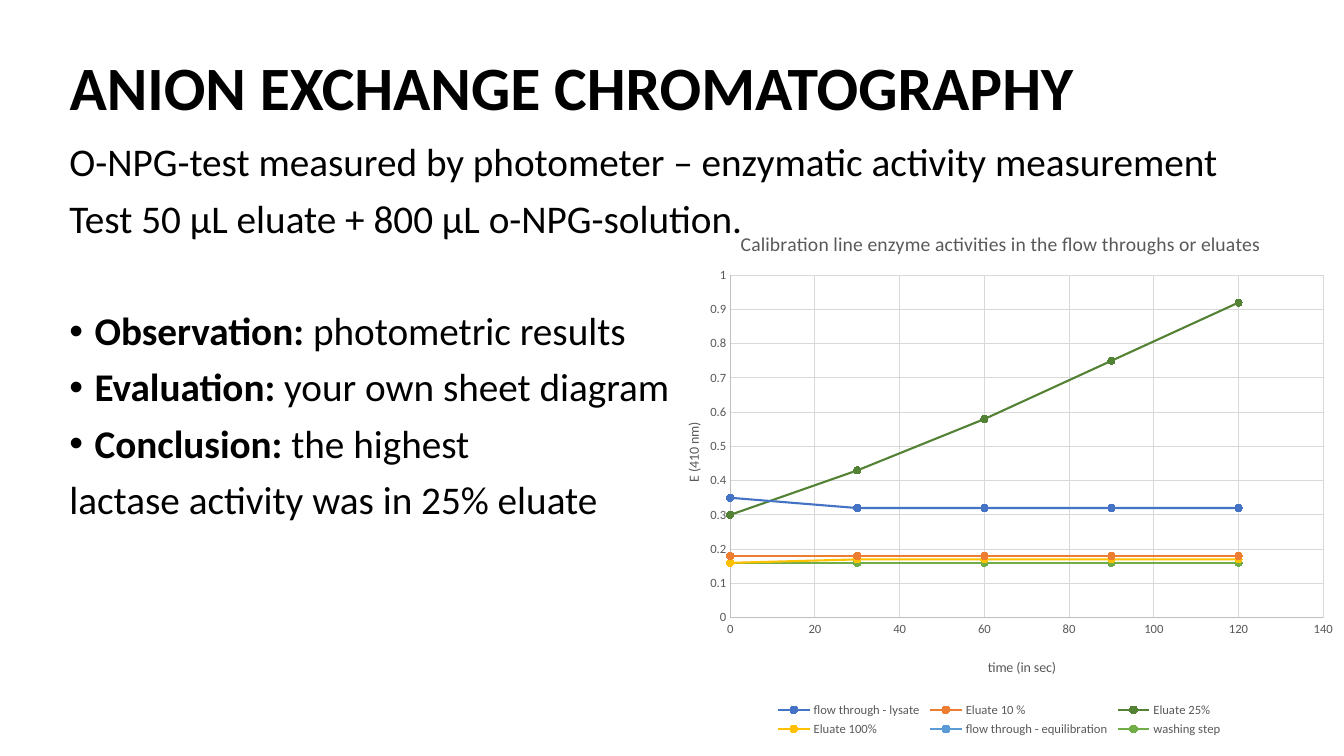
from lxml import etree
from pptx import Presentation
from pptx.chart.data import XyChartData
from pptx.dml.color import RGBColor
from pptx.enum.chart import XL_CHART_TYPE, XL_LEGEND_POSITION, XL_MARKER_STYLE, XL_TICK_MARK
from pptx.enum.text import MSO_ANCHOR, PP_ALIGN
from pptx.oxml.ns import qn
from pptx.util import Inches, Pt

SMOOTH = XL_CHART_TYPE.XY_SCATTER_SMOOTH
BOTTOM = XL_LEGEND_POSITION.BOTTOM
CIRCLE = XL_MARKER_STYLE.CIRCLE
NO_TICK = XL_TICK_MARK.NONE
MIDDLE = MSO_ANCHOR.MIDDLE
LEFT = PP_ALIGN.LEFT

BLACK = RGBColor(0x00, 0x00, 0x00)
GREY = RGBColor(0x59, 0x59, 0x59)
AXIS = RGBColor(0xBF, 0xBF, 0xBF)
GRID = RGBColor(0xD9, 0xD9, 0xD9)
BLUE = RGBColor(0x44, 0x72, 0xC4)
ORANGE = RGBColor(0xED, 0x7D, 0x31)
DARK_GREEN = RGBColor(0x54, 0x82, 0x35)
PALE_GREEN = RGBColor(0xA9, 0xD1, 0x8E)
YELLOW = RGBColor(0xFF, 0xC0, 0x00)
SKY = RGBColor(0x5B, 0x9B, 0xD5)
GREEN = RGBColor(0x70, 0xAD, 0x47)
FONT = "Calibri"

TITLE = "ANION EXCHANGE CHROMATOGRAPHY"
# (bold lead, text, bulleted, space before)
BODY = [
    ("", "O-NPG-test measured by photometer – enzymatic activity measurement", False, 0),
    ("", "Test 50 µL eluate + 800 µL o-NPG-solution.", False, 10),
    ("Observation: ", "photometric results", True, 50),
    ("Evaluation: ", "your own sheet diagram", True, 10),
    ("Conclusion: ", "the highest", True, 10),
    ("", "lactase activity was in 25%\u00a0eluate", False, 10),
]
CHART_TITLE = "Calibration line enzyme activities in the flow throughs or eluates"
SECONDS = [0, 30, 60, 90, 120]
SERIES = [
    ("flow through - lysate", [0.35, 0.32, 0.32, 0.32, 0.32], BLUE, BLUE),
    ("Eluate 10 %", [0.18] * 5, ORANGE, ORANGE),
    ("Eluate 25%", [0.3, 0.43, 0.58, 0.75, 0.92], DARK_GREEN, PALE_GREEN),
    ("Eluate 100%", [0.16, 0.17, 0.17, 0.17, 0.17], YELLOW, YELLOW),
    ("flow through - equilibration", [0.18] * 5, SKY, SKY),
    ("washing step", [0.16] * 5, GREEN, GREEN),
]


def style(font, size, color, bold=False):
    font.name = FONT
    font.size = Pt(size)
    font.bold = bold
    font.color.rgb = color


def add_bullet(p):
    pPr = p._p.get_or_add_pPr()
    pPr.set("marL", str(Inches(0.25)))
    pPr.set("indent", str(-Inches(0.25)))
    etree.SubElement(pPr, qn("a:buFont")).set("typeface", "Arial")
    etree.SubElement(pPr, qn("a:buChar")).set("char", "•")


def place(element, index, **fractions):
    for old in element.findall(qn("c:layout")):
        element.remove(old)
    layout = etree.Element(qn("c:layout"))
    manual = etree.SubElement(layout, qn("c:manualLayout"))
    if element.tag == qn("c:plotArea"):
        etree.SubElement(manual, qn("c:layoutTarget")).set("val", "inner")
    for mode in ("xMode", "yMode"):
        etree.SubElement(manual, qn("c:" + mode)).set("val", "edge")
    for name, value in fractions.items():
        etree.SubElement(manual, qn("c:" + name)).set("val", str(value))
    element.insert(index, layout)


def write_title(title, text, size, x, y):
    r = title.text_frame.paragraphs[0].add_run()
    r.text = text
    style(r.font, size, GREY)
    place(title._element, 1, x=x, y=y)


def format_axis(axis, maximum, unit, text, x, y):
    axis.minimum_scale, axis.maximum_scale, axis.major_unit = 0, maximum, unit
    axis.major_tick_mark = axis.minor_tick_mark = NO_TICK
    axis.has_major_gridlines = True
    for line, color in ((axis.format.line, AXIS), (axis.major_gridlines.format.line, GRID)):
        line.color.rgb = color
        line.width = Pt(0.75)
    labels = axis.tick_labels
    labels.number_format = "General"
    labels.number_format_is_linked = False
    style(labels.font, 9, GREY)
    write_title(axis.axis_title, text, 10, x, y)


prs = Presentation()
prs.slide_width, prs.slide_height = Inches(13.33), Inches(7.5)
slide = prs.slides.add_slide(prs.slide_layouts[5])

title = slide.shapes.title
title.left, title.top, title.width, title.height = map(Inches, (0.59, 0.17, 11.5, 1.45))
tf = title.text_frame
tf.vertical_anchor = MIDDLE
p = tf.paragraphs[0]
p.alignment = LEFT
p.line_spacing = 0.9
r = p.add_run()
r.text = TITLE
style(r.font, 44, BLACK, True)

tf = slide.shapes.add_textbox(*map(Inches, (0.59, 1.37, 12.13, 4.76))).text_frame
tf.word_wrap = True
for i, (lead, text, bulleted, before) in enumerate(BODY):
    p = tf.add_paragraph() if i else tf.paragraphs[0]
    if bulleted:
        add_bullet(p)
    p.line_spacing = 0.9
    p.space_before = Pt(before)
    for part, bold in ((lead, True), (text, False)):
        if part:
            r = p.add_run()
            r.text = part
            style(r.font, 28, BLACK, bold)

data = XyChartData()
for name, values, _, _ in SERIES:
    points = data.add_series(name)
    for second, value in zip(SECONDS, values):
        points.add_data_point(second, value)
frame = slide.shapes.add_chart(SMOOTH, *map(Inches, (6.49, 2.04, 6.84, 5.31)), data)
chart = frame.chart
style(chart.font, 10, BLACK)
chart.has_title = True
write_title(chart.chart_title, CHART_TITLE, 14, 0.12, 0.04)
format_axis(chart.category_axis, 140, 20, "time (in sec)", 0.48, 0.84)
format_axis(chart.value_axis, 1, 0.1, "E (410 nm)", 0.04, 0.4)

plot = chart.plots[0]
plot.vary_by_categories = False
for series, (_, _, color, fill) in zip(plot.series, SERIES):
    series.smooth = True
    series.format.line.color.rgb = color
    series.format.line.width = Pt(1.5)
    marker = series.marker
    marker.style = CIRCLE
    marker.size = 5
    marker.format.fill.solid()
    marker.format.fill.fore_color.rgb = fill
    marker.format.line.color.rgb = color

chart.has_legend = True
legend = chart.legend
legend.position = BOTTOM
legend.include_in_layout = False
style(legend.font, 9, GREY)
place(legend._element, 1, x=0.17, y=0.92, w=0.66, h=0.08)
place(chart._chartSpace.chart.plotArea, 0, x=0.11, y=0.13, w=0.86, h=0.64)

prs.save("out.pptx")
